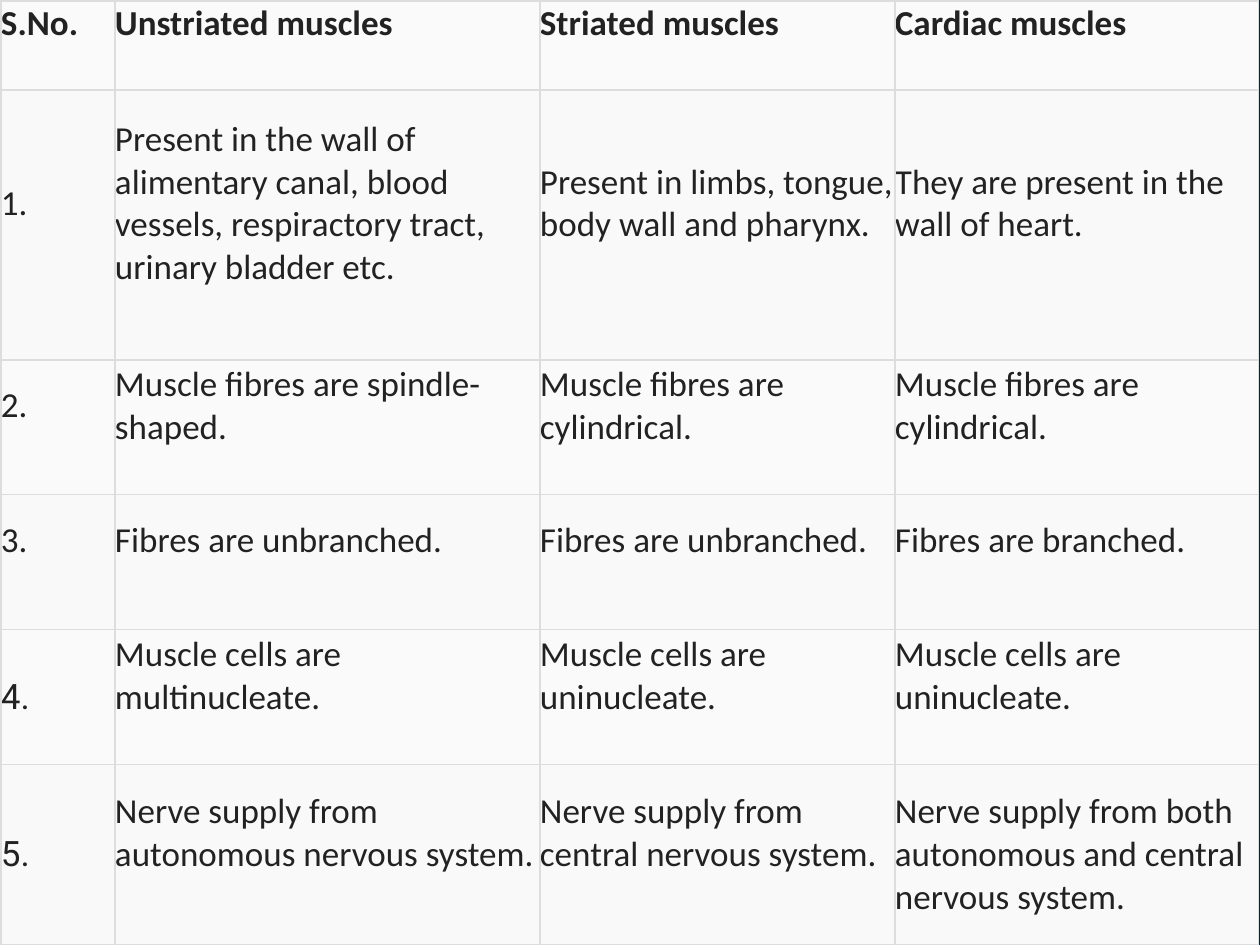
from typing import NamedTuple

from lxml import etree
from pptx import Presentation
from pptx.dml.color import RGBColor
from pptx.enum.text import MSO_ANCHOR
from pptx.oxml import parse_xml
from pptx.oxml.ns import nsdecls, qn
from pptx.util import Emu, Pt

MIDDLE = MSO_ANCHOR.MIDDLE

INK = RGBColor(0x22, 0x22, 0x22)
BORDER = RGBColor(0xDD, 0xDD, 0xDD)
EVEN_ROW = RGBColor(0xFA, 0xFA, 0xFA)
ODD_ROW = RGBColor(0xF9, 0xF9, 0xF9)
BACKDROP = (RGBColor(0x71, 0x7C, 0x84), RGBColor(0x01, 0x29, 0x3A))

SLIDE_WIDTH, SLIDE_HEIGHT = 1260, 945
TABLE_LEFT, TABLE_TOP = 1, 1
COLUMN_WIDTHS = (114, 425, 355, 364)
LINE_HEIGHT = 43


class Comparison(NamedTuple):
    number: str
    unstriated: str
    striated: str
    cardiac: str
    height: int
    number_font: str = "Calibri"


COMPARISONS = (
    Comparison("S.No.", "Unstriated muscles", "Striated muscles",
               "Cardiac muscles", 89),
    Comparison("1.", "Present in the wall of alimentary canal, blood vessels, "
               "respiractory tract, urinary bladder etc.",
               "Present in limbs, tongue, body wall and pharynx.",
               "They are present in the wall of heart.", 270),
    Comparison("2.", "Muscle fibres are spindle- shaped.",
               "Muscle fibres are cylindrical.",
               "Muscle fibres are cylindrical.", 135),
    Comparison("3.", "Fibres are unbranched.", "Fibres are unbranched.",
               "Fibres are branched.", 135),
    Comparison("4.", "Muscle cells are multinucleate.",
               "Muscle cells are uninucleate.",
               "Muscle cells are uninucleate.", 135, "Roboto"),
    Comparison("5.", "Nerve supply from autonomous nervous system.",
               "Nerve supply from central nervous system.",
               "Nerve supply from both autonomous and central nervous system.",
               180, "Roboto"),
)


def px(length: int) -> Emu:
    return Emu(round(length * 914400 / 126))


def paint_background(slide) -> None:
    fill = slide.background.fill
    fill.gradient()
    for stop, color, position in zip(fill.gradient_stops, BACKDROP, (0, 1)):
        stop.color.rgb = color
        stop.position = position
    gradient = slide.element.find(".//" + qn("a:gradFill"))
    gradient.replace(gradient.find(qn("a:lin")), parse_xml(
        f'<a:path {nsdecls("a")} path="circle">'
        '<a:fillToRect l="15000" t="50000" r="85000" b="60000"/></a:path>'))


def add_borders(cell) -> None:
    properties = cell._tc.get_or_add_tcPr()
    for index, side in enumerate(("lnL", "lnR", "lnT", "lnB")):
        line = etree.Element(qn(f"a:{side}"), w=str(Pt(0.75)))
        fill = etree.SubElement(line, qn("a:solidFill"))
        etree.SubElement(fill, qn("a:srgbClr"), val=str(BORDER))
        properties.insert(index, line)


def write_cell(cell, text: str, *, font: str, bold: bool, fill: RGBColor,
               space_below: int) -> None:
    cell.margin_left = cell.margin_right = cell.margin_top = 0
    cell.margin_bottom = px(space_below)
    cell.vertical_anchor = MIDDLE
    cell.fill.solid()
    cell.fill.fore_color.rgb = fill
    add_borders(cell)
    run = cell.text_frame.paragraphs[0].add_run()
    run.text = text
    run.font.name = font
    run.font.size = Pt(20)
    run.font.bold = bold
    run.font.color.rgb = INK


def add_comparison_table(slide, comparisons: tuple[Comparison, ...]) -> None:
    table = slide.shapes.add_table(
        len(comparisons), len(COLUMN_WIDTHS), px(TABLE_LEFT), px(TABLE_TOP),
        px(sum(COLUMN_WIDTHS)), px(sum(row.height for row in comparisons))).table
    table.first_row = table.horz_banding = False
    for column, width in zip(table.columns, COLUMN_WIDTHS):
        column.width = px(width)
    for r, row in enumerate(comparisons):
        table.rows[r].height = px(row.height)
        texts = (row.number, row.unstriated, row.striated, row.cardiac)
        for c, text in enumerate(texts):
            font = row.number_font if c == 0 else "Calibri"
            is_last = r == len(comparisons) - 1 and c == len(texts) - 1
            centred = font == "Roboto" or is_last
            write_cell(table.cell(r, c), text, font=font, bold=r == 0,
                       fill=ODD_ROW if r % 2 else EVEN_ROW,
                       space_below=0 if centred else LINE_HEIGHT)


def main() -> None:
    presentation = Presentation()
    presentation.slide_width = px(SLIDE_WIDTH)
    presentation.slide_height = px(SLIDE_HEIGHT)
    slide = presentation.slides.add_slide(presentation.slide_layouts[6])
    paint_background(slide)
    add_comparison_table(slide, COMPARISONS)
    presentation.save("out.pptx")


if __name__ == "__main__":
    main()
